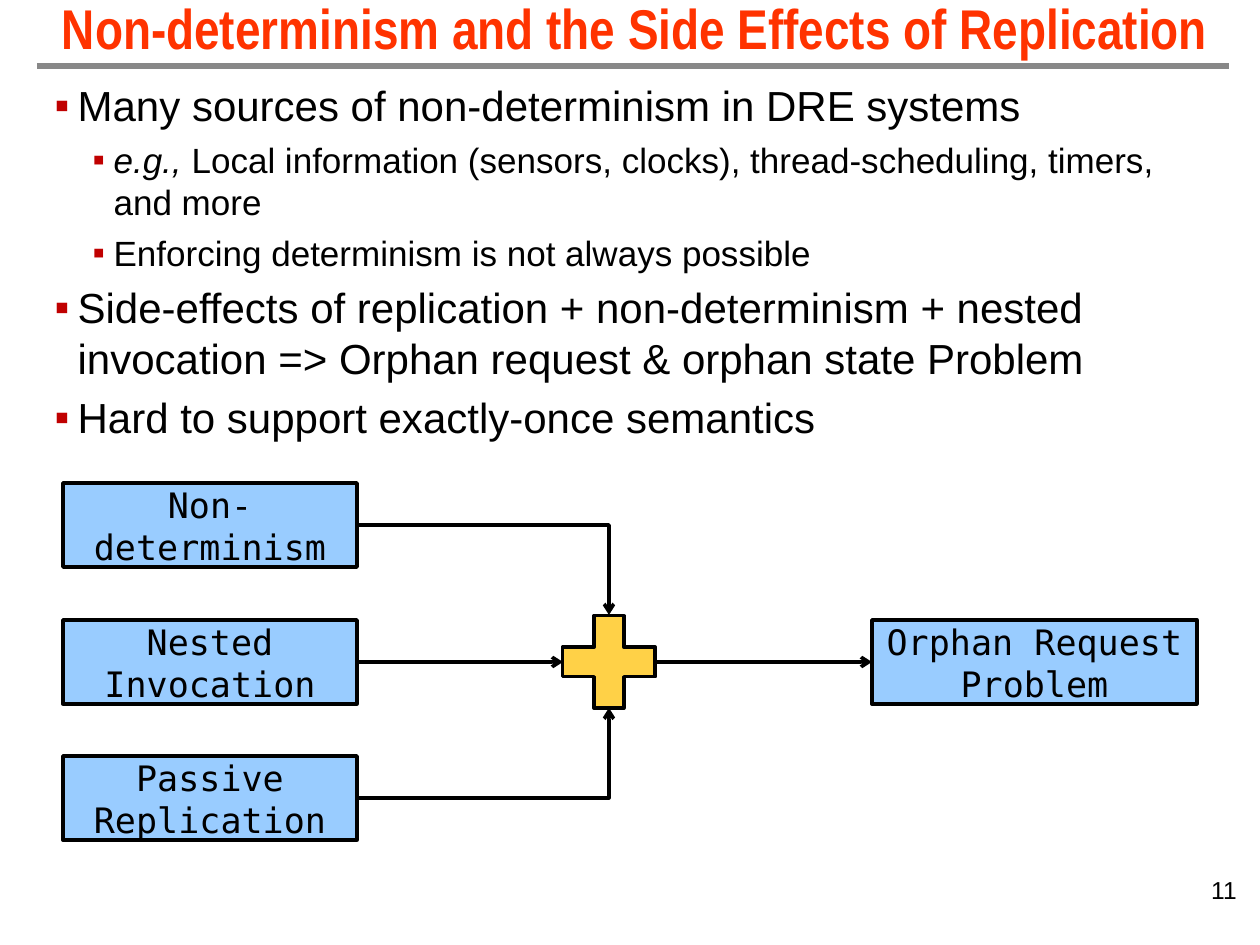
"""Build the slide on non-determinism and the side effects of replication."""
from lxml.etree import SubElement
from pptx import Presentation
from pptx.dml.color import RGBColor
from pptx.enum.shapes import MSO_CONNECTOR as Conn, MSO_SHAPE as Shape
from pptx.enum.text import MSO_ANCHOR as Anchor, MSO_AUTO_SIZE as AutoSize, PP_ALIGN as Align
from pptx.oxml.ns import qn
from pptx.util import Emu, Pt

PX = 914400 / 126
BLACK = RGBColor(0x00, 0x00, 0x00)
GREY = RGBColor(0x88, 0x88, 0x88)
RED = RGBColor(0xFF, 0x33, 0x00)
BULLET_RED = RGBColor(0xC0, 0x00, 0x00)
BLUE = RGBColor(0x99, 0xCC, 0xFF)
YELLOW = RGBColor(0xFF, 0xD1, 0x47)
MONO = "DejaVu Sans Mono"


def px(*values):
    return [Emu(round(v * PX)) for v in values]


def add_text(p, text, size=20, font="Arial", color=BLACK, bold=False, italic=False, align=None):
    r = p.add_run()
    r.text = text
    r.font.size, r.font.name = Pt(size), font
    r.font.bold, r.font.italic = bold, italic
    r.font.color.rgb = color
    if align is not None:
        p.alignment = align


prs = Presentation()
prs.slide_width, prs.slide_height = px(1260, 945)
s = prs.slides.add_slide(prs.slide_layouts[1])
title, body = s.shapes.title, s.placeholders[1]

title.left, title.top, title.width, title.height = px(21, 6, 1229, 53)
tf = title.text_frame
tf.auto_size, tf.vertical_anchor = AutoSize.NONE, Anchor.MIDDLE
p = tf.paragraphs[0]
p.line_spacing = 0.85
add_text(p, "Non-determinism and the Side Effects of Replication",
         size=32, font="Arial Narrow", color=RED, bold=True, align=Align.CENTER)

body.left, body.top, body.width, body.height = px(42, 73, 1166, 305)
tf = body.text_frame
tf.auto_size = AutoSize.NONE
bullets = [
    (0, "", "Many sources of non-determinism in DRE systems"),
    (1, "e.g.,", " Local information (sensors, clocks), thread-scheduling, timers, and more"),
    (1, "", "Enforcing determinism is not always possible"),
    (0, "", "Side-effects of replication + non-determinism + nested invocation"
            " => Orphan request & orphan state Problem"),
    (0, "", "Hard to support exactly-once semantics"),
]
for i, (level, lead, text) in enumerate(bullets):
    p = tf.add_paragraph() if i else tf.paragraphs[0]
    p.level = level
    p.space_before = Pt(5)
    size = (24, 20)[level]
    if lead:
        add_text(p, lead, size=size, italic=True)
    add_text(p, text, size=size)
    pPr = p._p.get_or_add_pPr()
    margin, indent = px(*((23, -23), (59, -21))[level])
    pPr.set("marL", str(margin))
    pPr.set("indent", str(indent))
    SubElement(SubElement(pPr, qn("a:buClr")), qn("a:srgbClr")).set("val", str(BULLET_RED))
    SubElement(pPr, qn("a:buFont")).set("typeface", "Arial")
    SubElement(pPr, qn("a:buChar")).set("char", "▪")

number = s.shapes.add_textbox(*px(955, 869, 294, 66))
number.text_frame.word_wrap = True
add_text(number.text_frame.paragraphs[0], "11", size=14, align=Align.RIGHT)

boxes = []
for text, left, top, width in [
    ("Non-determinism", 63, 483, 294),
    ("Nested Invocation", 63, 620, 294),
    ("Passive Replication", 63, 756, 294),
    ("Orphan Request Problem", 872, 620, 325),
]:
    box = s.shapes.add_shape(Shape.RECTANGLE, *px(left, top, width, 84))
    add_text(box.text_frame.paragraphs[0], text, font=MONO, align=Align.CENTER)
    boxes.append(box)
plus = s.shapes.add_shape(Shape.MATH_PLUS, *px(546, 599, 126, 126))
for sp, fill in [(box, BLUE) for box in boxes] + [(plus, YELLOW)]:
    sp.shadow.inherit = False
    sp.fill.solid()
    sp.fill.fore_color.rgb = fill
    sp.line.color.rgb = BLACK
    sp.line.width = Pt(2)

non_determinism, nested, passive, orphan = boxes
for kind, ends, start, end, color, width in [
    (Conn.STRAIGHT, (37, 66, 1229, 66), None, None, GREY, 3),
    (Conn.ELBOW, (357, 525, 609, 615), None, None, BLACK, 2),
    (Conn.STRAIGHT, (357, 662, 563, 662), nested, None, BLACK, 2),
    (Conn.ELBOW, (357, 798, 609, 708), None, None, BLACK, 2),
    (Conn.STRAIGHT, (655, 662, 872, 662), None, orphan, BLACK, 2),
]:
    line = s.shapes.add_connector(kind, *px(*ends))
    line.line.color.rgb = color
    line.line.width = Pt(width)
    if start:
        line.begin_connect(start, 3)
    if end:
        line.end_connect(end, 1)
    spPr = line._element.spPr
    if kind == Conn.ELBOW:
        spPr.find(qn("a:prstGeom")).set("prst", "bentConnector2")
    if color == BLACK:
        SubElement(spPr.find(qn("a:ln")), qn("a:tailEnd")).set("type", "arrow")
    SubElement(spPr, qn("a:effectLst"))

prs.save("out.pptx")
